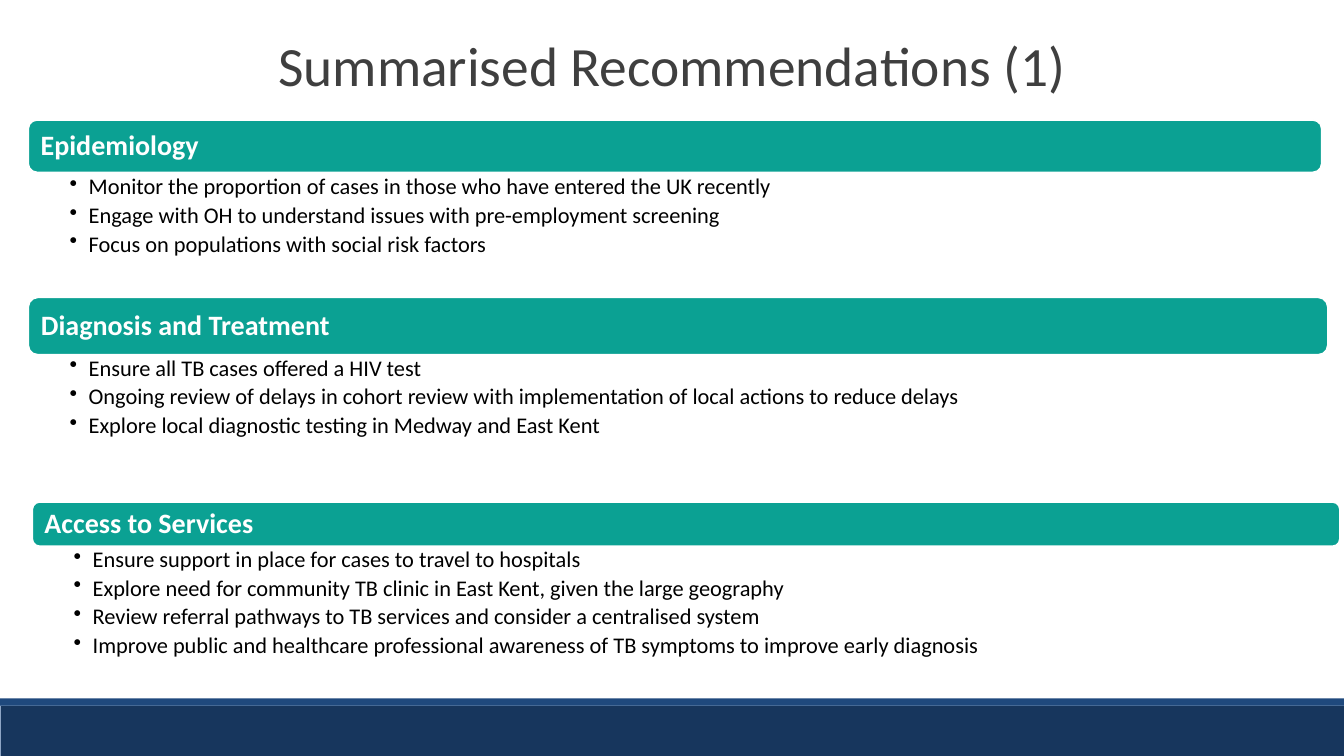
from dataclasses import dataclass

import pptx
import pptx.dml.color
import pptx.enum.shapes
import pptx.enum.text
import pptx.oxml
import pptx.oxml.ns
import pptx.util
from pptx.util import Inches


@dataclass(frozen=True)
class Theme:
    font: str = "Calibri"
    title: str = "3F3F3F"
    heading: str = "FFFFFF"
    body: str = "000000"
    band: str = "0BA193"
    band_edge: str = "FFFFFF"
    footer: str = "17365D"
    footer_edge: str = "8EA5C4"
    footer_strip: str = "1F497D"
    title_size: float = 39.6
    heading_size: float = 20
    body_size: float = 16


THEME = Theme()

SECTIONS = [
    ("Epidemiology", (0.28, 1.19, 12.83, 1.43), 0.52, 0.03, [
        "Monitor the proportion of cases in those who have entered the UK recently",
        "Engage with OH to understand issues with pre-employment screening",
        "Focus on populations with social risk factors",
    ]),
    ("Diagnosis and Treatment", (0.28, 2.95, 12.89, 1.47), 0.57, 0.02, [
        "Ensure all TB cases offered a HIV test",
        "Ongoing review of delays in cohort review with implementation of local actions to reduce delays",
        "Explore local diagnostic testing in Medway and East Kent",
    ]),
    ("Access to Services", (0.32, 4.98, 12.97, 1.64), 0.44, 0.02, [
        "Ensure support in place for cases to travel to hospitals",
        "Explore need for community TB clinic in East Kent, given the large geography",
        "Review referral pathways to TB services and consider a centralised system",
        "Improve public and healthcare professional awareness of TB symptoms to improve early diagnosis",
    ]),
]


def rgb(value):
    return pptx.dml.color.RGBColor.from_string(value)


def add_panel(slide, kind, box, fill, edge=None, edge_width=0):
    panel = slide.shapes.add_shape(kind, *map(Inches, box))
    panel.shadow.inherit = False
    panel.fill.solid()
    panel.fill.fore_color.rgb = rgb(fill)
    if edge:
        panel.line.color.rgb = rgb(edge)
        panel.line.width = pptx.util.Pt(edge_width)
    else:
        panel.line.fill.background()
    return panel


def set_frame(frame, insets, anchor):
    frame.word_wrap = True
    frame.vertical_anchor = anchor
    frame.margin_left, frame.margin_top, frame.margin_right, frame.margin_bottom = map(Inches, insets)


def write(paragraph, text, size, color, spacing, align, bold=False):
    paragraph.alignment = align
    paragraph.line_spacing = spacing
    run = paragraph.add_run()
    run.text = text
    run.font.name = THEME.font
    run.font.size = pptx.util.Pt(size)
    run.font.bold = bold
    run.font.color.rgb = rgb(color)


def add_bullet(paragraph):
    properties = paragraph._p.get_or_add_pPr()
    properties.set("marL", str(Inches(0.19)))
    properties.set("indent", str(-Inches(0.19)))
    bullet = pptx.oxml.parse_xml(
        f'<a:buChar {pptx.oxml.ns.nsdecls("a")} char="•"/>')
    properties.append(bullet)


def add_title(slide, box, text):
    title = slide.shapes.add_textbox(*map(Inches, box))
    set_frame(title.text_frame, (0.1, 0.05, 0.1, 0.05), pptx.enum.text.MSO_ANCHOR.BOTTOM)
    write(title.text_frame.paragraphs[0], text, THEME.title_size, THEME.title,
          0.85, pptx.enum.text.PP_ALIGN.CENTER)


def add_section(slide, box, band_height, body_inset, heading, points):
    left, top, width, height = box
    band = add_panel(slide, pptx.enum.shapes.MSO_SHAPE.ROUNDED_RECTANGLE,
                     (left, top, width, band_height), THEME.band, THEME.band_edge, 1.25)
    band.adjustments[0] = 0.167
    set_frame(band.text_frame, (0.1, 0.08, 0.1, 0.08), pptx.enum.text.MSO_ANCHOR.MIDDLE)
    write(band.text_frame.paragraphs[0], heading, THEME.heading_size, THEME.heading,
          0.9, pptx.enum.text.PP_ALIGN.LEFT, bold=True)

    body = slide.shapes.add_textbox(
        *map(Inches, (left, top + band_height, width, height - band_height)))
    frame = body.text_frame
    set_frame(frame, (0.41, body_inset, 0.12, body_inset), pptx.enum.text.MSO_ANCHOR.TOP)
    for index, point in enumerate(points):
        paragraph = frame.add_paragraph() if index else frame.paragraphs[0]
        paragraph.level = 1
        paragraph.space_before = pptx.util.Pt(3.2 if index else 0)
        write(paragraph, point, THEME.body_size, THEME.body,
              0.9, pptx.enum.text.PP_ALIGN.LEFT)
        add_bullet(paragraph)


def add_footer(slide, box):
    left, top, width, height = box
    strip_height = 0.07
    rectangle = pptx.enum.shapes.MSO_SHAPE.RECTANGLE
    add_panel(slide, rectangle, (left, top + strip_height, width, height - strip_height),
              THEME.footer, THEME.footer_edge, 0.25)
    add_panel(slide, rectangle, (left, top, width, strip_height), THEME.footer_strip)


def main():
    deck = pptx.Presentation()
    deck.slide_width = Inches(13.33)
    deck.slide_height = Inches(7.5)
    slide = deck.slides.add_slide(deck.slide_layouts[6])
    add_footer(slide, (0, 6.93, 13.33, 0.57))
    add_title(slide, (2.44, 0.16, 8.45, 0.86), "Summarised Recommendations (1)")
    for heading, box, band_height, body_inset, points in SECTIONS:
        add_section(slide, box, band_height, body_inset, heading, points)
    deck.save("out.pptx")


if __name__ == "__main__":
    main()
